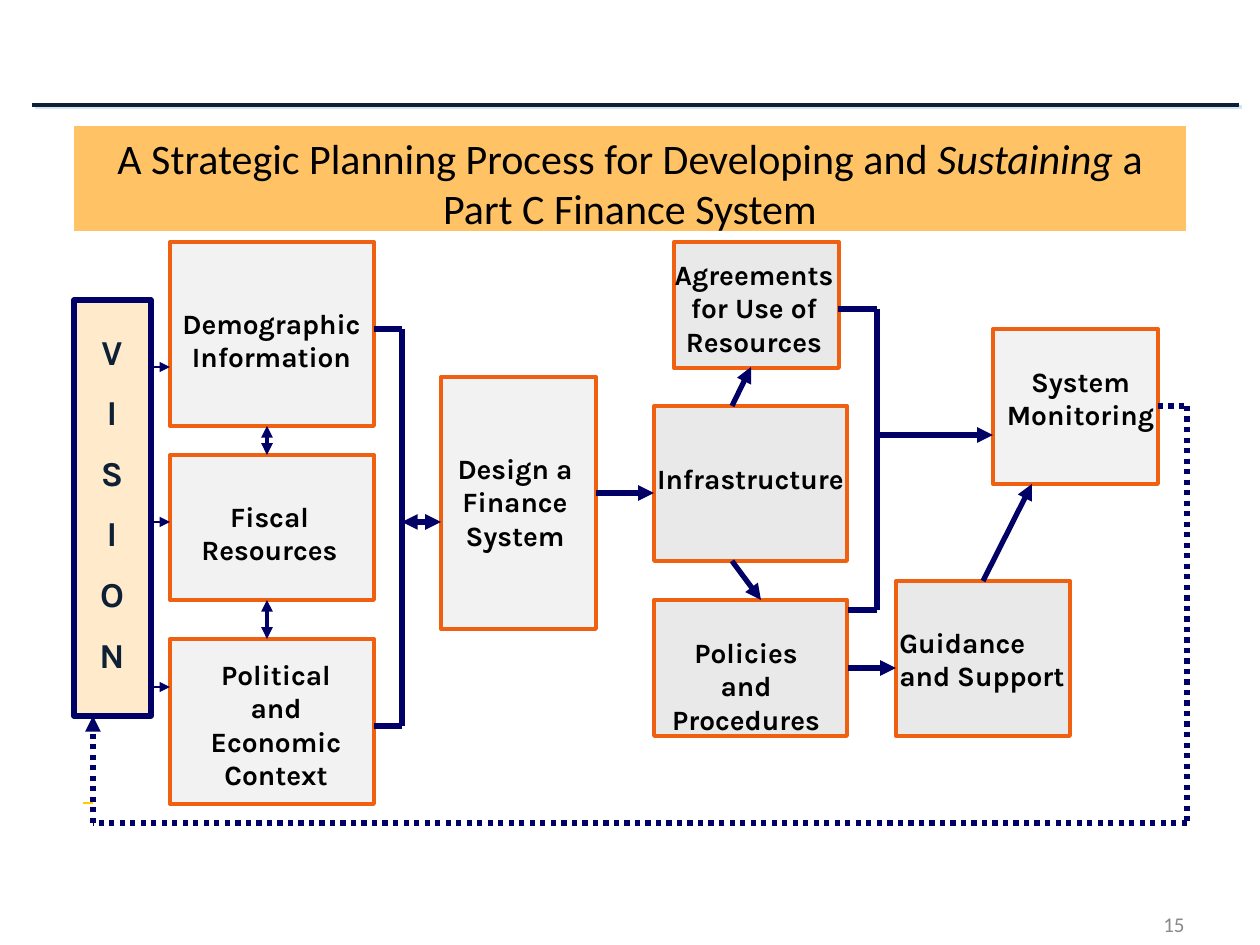
from lxml import etree
from pptx import Presentation, util as u
from pptx.dml.color import RGBColor
from pptx.enum import dml, shapes, text
from pptx.oxml.ns import qn

PX = u.Inches(1) / 126
NAVY, DARK, RUST = "000066", "0D2036", "EF6011"
PALE, GREY = "F2F2F2", "E9E9E9"
MID, LEFT, RIGHT = text.PP_ALIGN.CENTER, text.PP_ALIGN.LEFT, text.PP_ALIGN.RIGHT

deck = Presentation()
deck.slide_width, deck.slide_height = u.Inches(10), u.Inches(7.5)
slide = deck.slides.add_slide(deck.slide_layouts[6])


def write(place, paras, size, font="Karla", hue="000000", bold=True, align=MID, fill=None):
    """Add a text box; each paragraph is a list of (words, italic), and a newline breaks the line."""
    box = slide.shapes.add_textbox(*(round(n * PX) for n in place))
    if fill:
        box.fill.solid()
        box.fill.fore_color.rgb = RGBColor.from_string(fill)
    frame = box.text_frame
    frame.word_wrap = True
    for i, runs in enumerate(paras):
        para = frame.paragraphs[0] if i == 0 else frame.add_paragraph()
        para.alignment = align
        if i:
            para.space_before = u.Pt(10.6)
        for words, slant in runs:
            for j, row in enumerate(words.split("\n")):
                if j:
                    para.add_line_break()
                run = para.add_run()
                run.text = row
                run.font.name, run.font.size = font, u.Pt(size)
                run.font.bold, run.font.italic = bold, slant
                run.font.color.rgb = RGBColor.from_string(hue)
    return frame


def link(ends, hue=NAVY, width=3, heads="", dots=False):
    """Draw a line; heads may hold "head" (start) and "tail" (finish)."""
    line = slide.shapes.add_connector(shapes.MSO_CONNECTOR.STRAIGHT, *(round(n * PX) for n in ends))
    line.line.color.rgb = RGBColor.from_string(hue)
    line.line.width = u.Pt(width)
    if dots:
        line.line.dash_style = dml.MSO_LINE.ROUND_DOT
    pen = line.line._get_or_add_ln()
    for end in heads.split():
        etree.SubElement(pen, qn(f"a:{end}End"), type="triangle")
    return etree.SubElement(line._element.spPr, qn("a:effectLst"))


# Header rule, title and page number
glow = link((32, 105, 1239, 105), DARK, 2)
shade = etree.SubElement(glow, qn("a:outerShdw"), dist="25400", dir="2400000", rotWithShape="0")
etree.SubElement(shade, qn("a:srgbClr"), val="D4E6F4")
write((74, 126, 1112, 105), [[
    ("A Strategic Planning Process for Developing and ", False),
    ("Sustaining", True),
    (" a Part C Finance System", False),
]], 24, "Calibri", bold=False, fill="FFC365")
page = write((903, 903, 294, 42), [[("15", False)]], 12, "Calibri", "898989", False, RIGHT)
page.vertical_anchor = text.MSO_ANCHOR.MIDDLE

# Outlined panels
panels = [
    ((74, 300, 77, 416), "FFEBCC", NAVY, 3),
    ((170, 242, 204, 184), PALE, RUST, 2.25),
    ((170, 455, 204, 145), PALE, RUST, 2.25),
    ((170, 639, 204, 165), PALE, RUST, 2.25),
    ((441, 377, 155, 252), PALE, RUST, 2.25),
    ((674, 242, 165, 126), GREY, RUST, 2.25),
    ((654, 406, 193, 155), GREY, RUST, 2.25),
    ((654, 600, 193, 136), GREY, RUST, 2.25),
    ((896, 581, 174, 155), GREY, RUST, 2.25),
    ((993, 329, 165, 155), PALE, RUST, 2.25),
]
for place, fill, edge, width in panels:
    panel = slide.shapes.add_shape(shapes.MSO_SHAPE.RECTANGLE, *(round(n * PX) for n in place))
    panel.shadow.inherit = False
    panel.fill.solid()
    panel.fill.fore_color.rgb = RGBColor.from_string(fill)
    panel.line.color.rgb = RGBColor.from_string(edge)
    panel.line.width = u.Pt(width)

# Panel labels
labels = [
    ((160, 300, 223, 81), "Demographic Information", MID, None),
    ((179, 493, 181, 81), "Fiscal Resources", MID, PALE),
    ((192, 651, 168, 149), "Political\nand\nEconomic Context", MID, PALE),
    ((418, 445, 194, 113), "Design a\nFinance System", MID, None),
    ((640, 251, 228, 113), "Agreements\nfor Use of\nResources", MID, None),
    ((644, 455, 213, 47), "Infrastructure", MID, None),
    ((654, 629, 184, 81), "Policies\nand\nProcedures", MID, None),
    ((887, 619, 212, 81), "Guidance\nand Support", LEFT, None),
    ((974, 358, 213, 81), "System Monitoring", MID, None),
]
for place, words, align, fill in labels:
    write(place, [[(words, False)]], 16, align=align, fill=fill)
write((83, 324, 58, 373), [[(letter, False)] for letter in "VISION"], 20, hue=DARK)

# Brackets
for ends in [
    (402, 329, 402, 726), (402, 329, 374, 329), (402, 726, 374, 726),
    (877, 309, 877, 610), (877, 309, 838, 309), (848, 610, 877, 610),
]:
    link(ends)

# Arrows between panels
link((402, 522, 441, 522), heads="head tail")
for top, foot in [(426, 455), (600, 639)]:
    link((267, top, 267, foot), width=2.25, heads="head tail")
for ends in [
    (732, 406, 751, 367), (596, 493, 654, 493), (732, 561, 761, 600),
    (848, 668, 896, 668), (877, 435, 993, 435), (983, 581, 1032, 484),
]:
    link(ends, heads="tail")
for y in (367, 522, 687):
    link((151, y, 170, y), width=0.75, heads="tail")

# Dotted loop back to the vision
link((93, 803, 83, 803), "FFCC00", 0.75)
for ends in [(1158, 406, 1187, 406), (1187, 406, 1187, 823), (1187, 823, 93, 823)]:
    link(ends, dots=True)
link((93, 823, 93, 716), heads="tail", dots=True)

deck.save("out.pptx")
